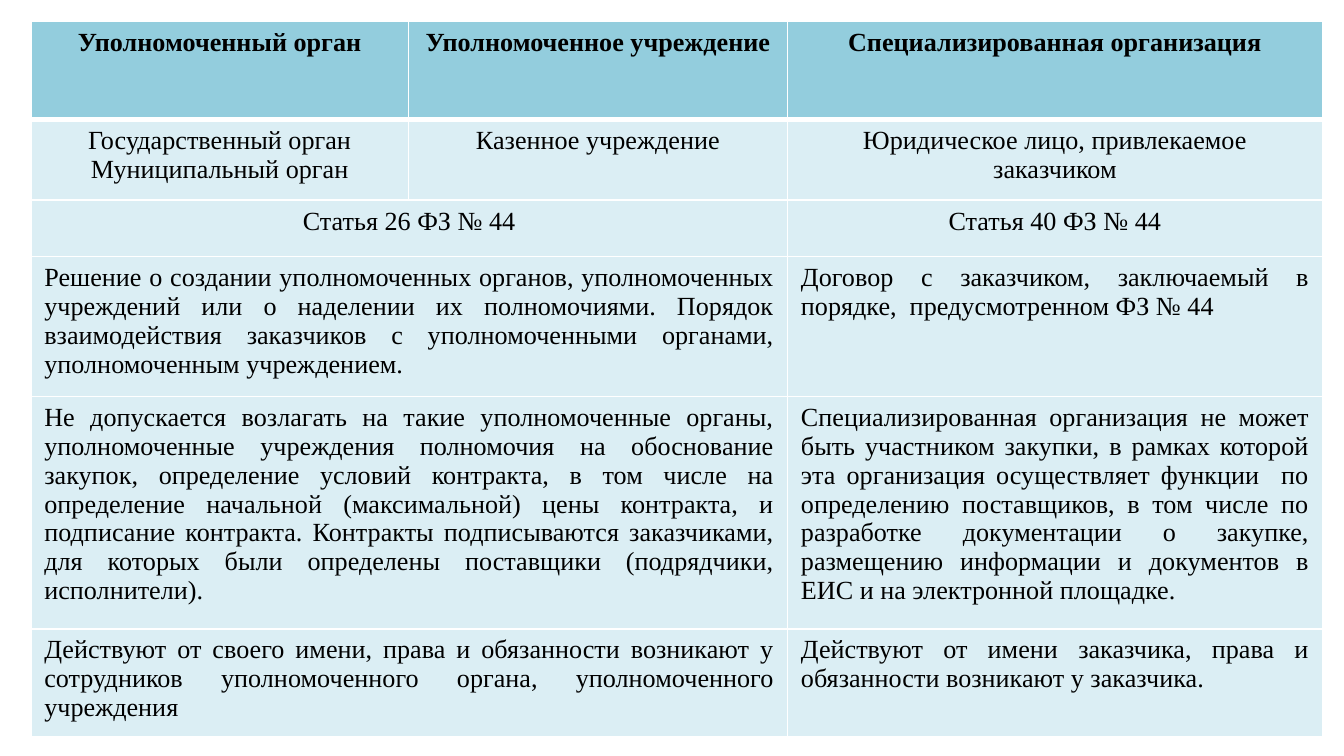
from dataclasses import dataclass

from lxml import etree
from pptx import Presentation
from pptx.dml.color import RGBColor
from pptx.enum.text import PP_ALIGN
from pptx.oxml.ns import qn
from pptx.util import Inches, Pt

CENTER = PP_ALIGN.CENTER
JUSTIFY = PP_ALIGN.JUSTIFY
BLANK_LAYOUT = 6


@dataclass(frozen=True)
class Theme:
    font: str = "Times New Roman"
    text_size: int = 14
    text: str = "000000"
    header_fill: str = "93CDDD"
    body_fill: str = "DBEEF4"
    border: str = "FFFFFF"
    thin: int = 1
    thick: int = 3


# A row with two texts has its first cell spanning the first two columns.
COLUMN_WIDTHS = [2.81, 2.82, 3.98]
ROWS = [
    (0.73, CENTER, ["Уполномоченный орган", "Уполномоченное учреждение",
                    "Специализированная организация"]),
    (0.6, CENTER, ["Государственный орган\nМуниципальный орган",
                   "Казенное учреждение",
                   "Юридическое лицо, привлекаемое заказчиком"]),
    (0.42, CENTER, ["Статья 26 ФЗ № 44", "Статья 40 ФЗ № 44"]),
    (1.04, JUSTIFY, [
        "Решение о создании уполномоченных органов, уполномоченных учреждений "
        "или о наделении их полномочиями. Порядок взаимодействия заказчиков с "
        "уполномоченными органами, уполномоченным учреждением.",
        "Договор с заказчиком, заключаемый в порядке,  предусмотренном ФЗ № 44"]),
    (1.73, JUSTIFY, [
        "Не допускается возлагать на такие уполномоченные органы, "
        "уполномоченные учреждения полномочия на обоснование закупок, "
        "определение условий контракта, в том числе на определение начальной "
        "(максимальной) цены контракта, и подписание контракта. Контракты "
        "подписываются заказчиками, для которых были определены поставщики "
        "(подрядчики, исполнители).",
        "Специализированная организация не может быть участником закупки, в "
        "рамках которой эта организация осуществляет функции  по определению "
        "поставщиков, в том числе по разработке документации о закупке, "
        "размещению информации и документов в ЕИС и на электронной площадке."]),
    (0.8, JUSTIFY, [
        "Действуют от своего имени, права и обязанности возникают у "
        "сотрудников уполномоченного органа, уполномоченного учреждения",
        "Действуют от имени заказчика, права и обязанности возникают у "
        "заказчика."]),
]


class SlideBuilder:
    def __init__(self, slide, theme):
        self.slide = slide
        self.theme = theme

    def add_table(self, left, top, column_widths, rows):
        height = sum(row_height for row_height, _, _ in rows)
        table = self.slide.shapes.add_table(
            len(rows), len(column_widths), Inches(left), Inches(top),
            Inches(sum(column_widths)), Inches(height)).table
        for column, width in zip(table.columns, column_widths):
            column.width = Inches(width)
        for index, (row_height, alignment, texts) in enumerate(rows):
            table.rows[index].height = Inches(row_height)
            cells = list(table.rows[index].cells)
            for cell in cells:
                self.style_cell(cell, index)
            if len(texts) < len(cells):
                cells[0].merge(cells[1])
                del cells[1]
            for cell, text in zip(cells, texts):
                self.write_cell(cell, text, alignment, bold=index == 0)

    def style_cell(self, cell, row_index):
        theme = self.theme
        is_header = row_index == 0
        top = theme.thick if row_index == 1 else theme.thin
        bottom = theme.thick if is_header else theme.thin
        self.set_borders(cell, {"a:lnL": theme.thin, "a:lnR": theme.thin,
                                "a:lnT": top, "a:lnB": bottom})
        cell.fill.solid()
        cell.fill.fore_color.rgb = RGBColor.from_string(
            theme.header_fill if is_header else theme.body_fill)

    def set_borders(self, cell, widths):
        properties = cell._tc.get_or_add_tcPr()
        for side, width in widths.items():
            line = etree.SubElement(properties, qn(side), w=str(Pt(width)))
            fill = etree.SubElement(line, qn("a:solidFill"))
            etree.SubElement(fill, qn("a:srgbClr"), val=self.theme.border)

    def write_cell(self, cell, text, alignment, bold):
        frame = cell.text_frame
        for index, content in enumerate(text.split("\n")):
            paragraph = frame.add_paragraph() if index else frame.paragraphs[0]
            paragraph.alignment = alignment
            run = paragraph.add_run()
            run.text = content
            run.font.name = self.theme.font
            run.font.size = Pt(self.theme.text_size)
            run.font.bold = bold
            run.font.color.rgb = RGBColor.from_string(self.theme.text)


def main():
    presentation = Presentation()
    presentation.slide_width = Inches(10)
    presentation.slide_height = Inches(10) * 9 // 16
    slide = presentation.slides.add_slide(
        presentation.slide_layouts[BLANK_LAYOUT])
    builder = SlideBuilder(slide, Theme())
    builder.add_table(0.23, 0.16, COLUMN_WIDTHS, ROWS)
    presentation.save("out.pptx")


if __name__ == "__main__":
    main()
